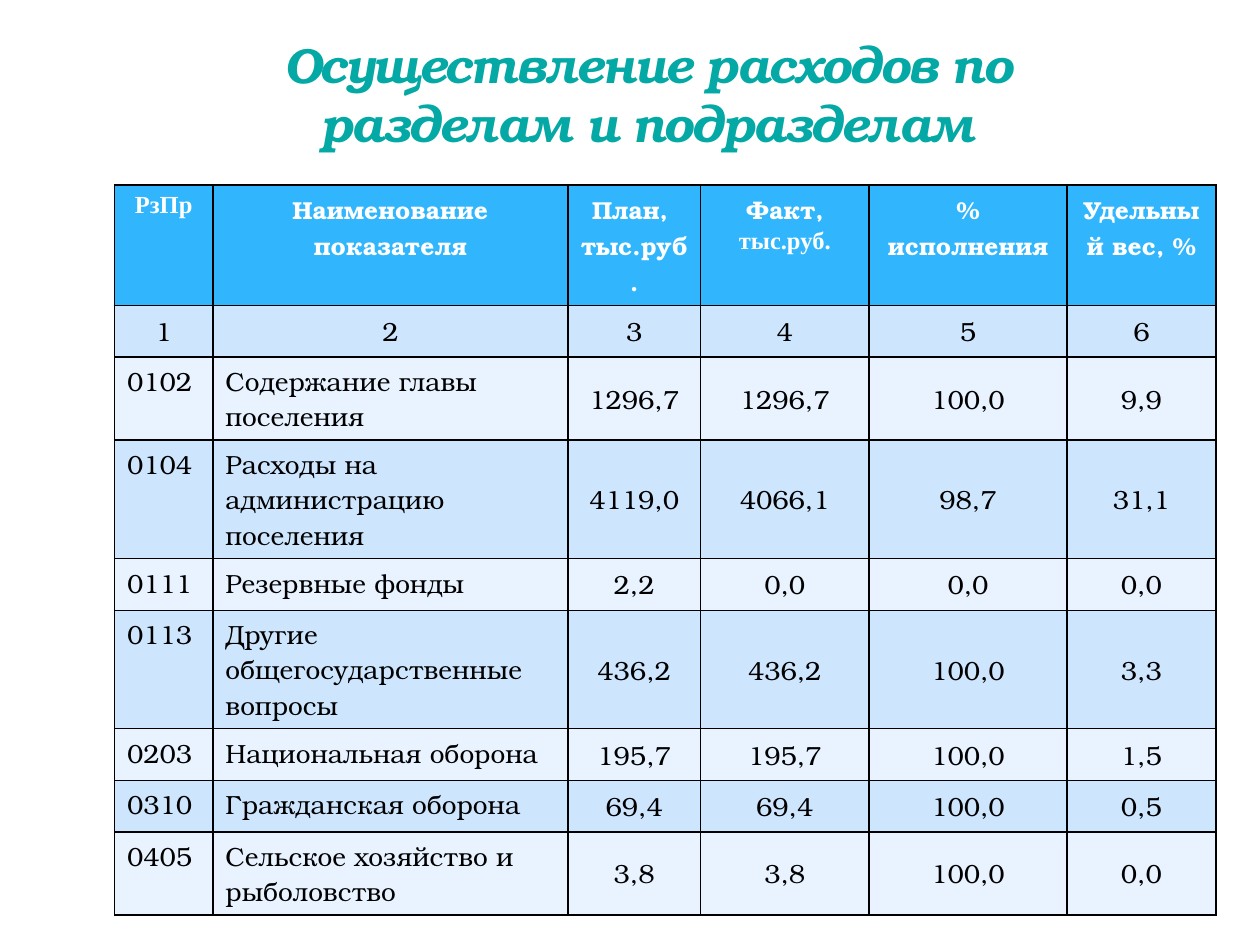
from dataclasses import dataclass

from lxml import etree
from pptx import Presentation
from pptx.dml.color import RGBColor
from pptx.enum.text import MSO_ANCHOR, MSO_AUTO_SIZE, PP_ALIGN
from pptx.util import Cm, Pt

CENTER, LEFT = PP_ALIGN.CENTER, PP_ALIGN.LEFT
TOP, MIDDLE, BOTTOM = MSO_ANCHOR.TOP, MSO_ANCHOR.MIDDLE, MSO_ANCHOR.BOTTOM
NS = "http://schemas.openxmlformats.org/drawingml/2006/main"


@dataclass(frozen=True)
class Theme:
    font: str = "TeX Gyre Bonum"
    header_font: str = "Times New Roman"
    title: str = "04A8A4"
    outline: str = "AFCCDE"
    header: str = "31B6FD"
    header_text: str = "FFFFFF"
    bands: tuple = ("CEE5FE", "E8F3FF")
    text: str = "000000"
    border: str = "000000"
    title_size: int = 28
    header_size: int = 14
    body_size: int = 15


T = Theme()


def style_run(r, font, size, color, bold, italic=False):
    r.font.name = font
    r.font.size = Pt(size)
    r.font.color.rgb = RGBColor.from_string(color)
    r.font.bold = bold
    r.font.italic = italic


def line_xml(tag, width, color, alpha=100):
    return etree.fromstring(
        f'<a:{tag} xmlns:a="{NS}" w="{Pt(width)}"><a:solidFill><a:srgbClr val="{color}">'
        f'<a:alpha val="{alpha * 1000}"/></a:srgbClr></a:solidFill>'
        f'<a:prstDash val="solid"/></a:{tag}>')


prs = Presentation()
prs.slide_width, prs.slide_height = Cm(25.4), Cm(19.05)
s = prs.slides.add_slide(prs.slide_layouts[5])

# Title
title = s.shapes.title
title.left, title.top, title.width, title.height = Cm(3.3), Cm(1.93), Cm(19.51), Cm(1.27)
tf = title.text_frame
tf.text = "Осуществление расходов по разделам и подразделам"
tf.word_wrap = True
tf.auto_size = MSO_AUTO_SIZE.NONE
tf.vertical_anchor = BOTTOM
p = tf.paragraphs[0]
p.alignment = CENTER
r = p.runs[0]
style_run(r, T.font, T.title_size, T.title, True, True)
rPr = r.font._element
rPr.set("spc", "-100")
rPr.insert(0, line_xml("ln", 0.25, T.outline, 25))

# Table content
rows = [
    ("РзПр", "Наименование показателя", "План, \nтыс.руб.", "Факт,\nтыс.руб.",
     "% исполнения", "Удельный вес, %"),
    ("1", "2", "3", "4", "5", "6"),
    ("0102", "Содержание главы поселения", "1296,7", "1296,7", "100,0", "9,9"),
    ("0104", "Расходы на администрацию поселения", "4119,0", "4066,1", "98,7", "31,1"),
    ("0111", "Резервные фонды", "2,2", "0,0", "0,0", "0,0"),
    ("0113", "Другие общегосударственные вопросы", "436,2", "436,2", "100,0", "3,3"),
    ("0203", "Национальная оборона", "195,7", "195,7", "100,0", "1,5"),
    ("0310", "Гражданская оборона", "69,4", "69,4", "100,0", "0,5"),
    ("0405", "Сельское хозяйство и рыболовство", "3,8", "3,8", "100,0", "0,0"),
]
col_widths = [1.98, 7.16, 2.67, 3.4, 3.99, 3]
row_heights = [2.21] + [1.04] * (len(rows) - 1)
# Header paragraphs in the second font, as (column, paragraph)
header_font_spots = {(0, 0), (3, 1)}

# Table grid
table = s.shapes.add_table(len(rows), len(col_widths), Cm(2.31), Cm(3.73),
                           Cm(sum(col_widths)), Cm(sum(row_heights))).table
for col, width in zip(table.columns, col_widths):
    col.width = Cm(width)
for row, height in zip(table.rows, row_heights):
    row.height = Cm(height)

# Table cells
for i, values in enumerate(rows):
    for j, value in enumerate(values):
        is_header, is_label = i == 0, i > 1 and j < 2
        cell = table.cell(i, j)
        tcPr = cell._tc.get_or_add_tcPr()
        for side in ("lnL", "lnR", "lnT", "lnB"):
            tcPr.append(line_xml(side, 1, T.border))
        cell.fill.solid()
        fill = T.header if is_header else T.bands[(i - 1) % 2]
        cell.fill.fore_color.rgb = RGBColor.from_string(fill)
        cell.vertical_anchor = TOP if is_header or is_label else MIDDLE
        cell.text_frame.text = value
        for k, p in enumerate(cell.text_frame.paragraphs):
            p.alignment = LEFT if is_label else CENTER
            if is_header:
                font = T.header_font if (j, k) in header_font_spots else T.font
                style_run(p.runs[0], font, T.header_size, T.header_text, True)
            else:
                style_run(p.runs[0], T.font, T.body_size, T.text, False)

prs.save("out.pptx")
